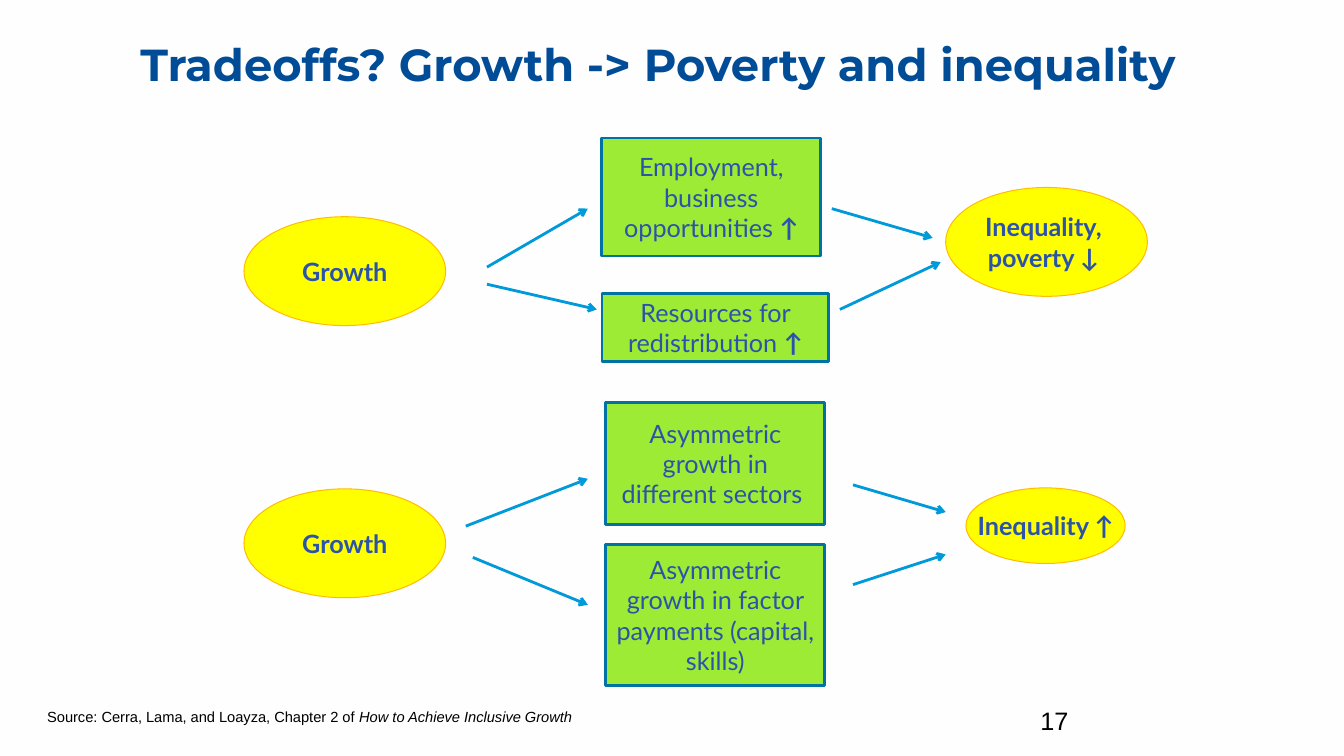
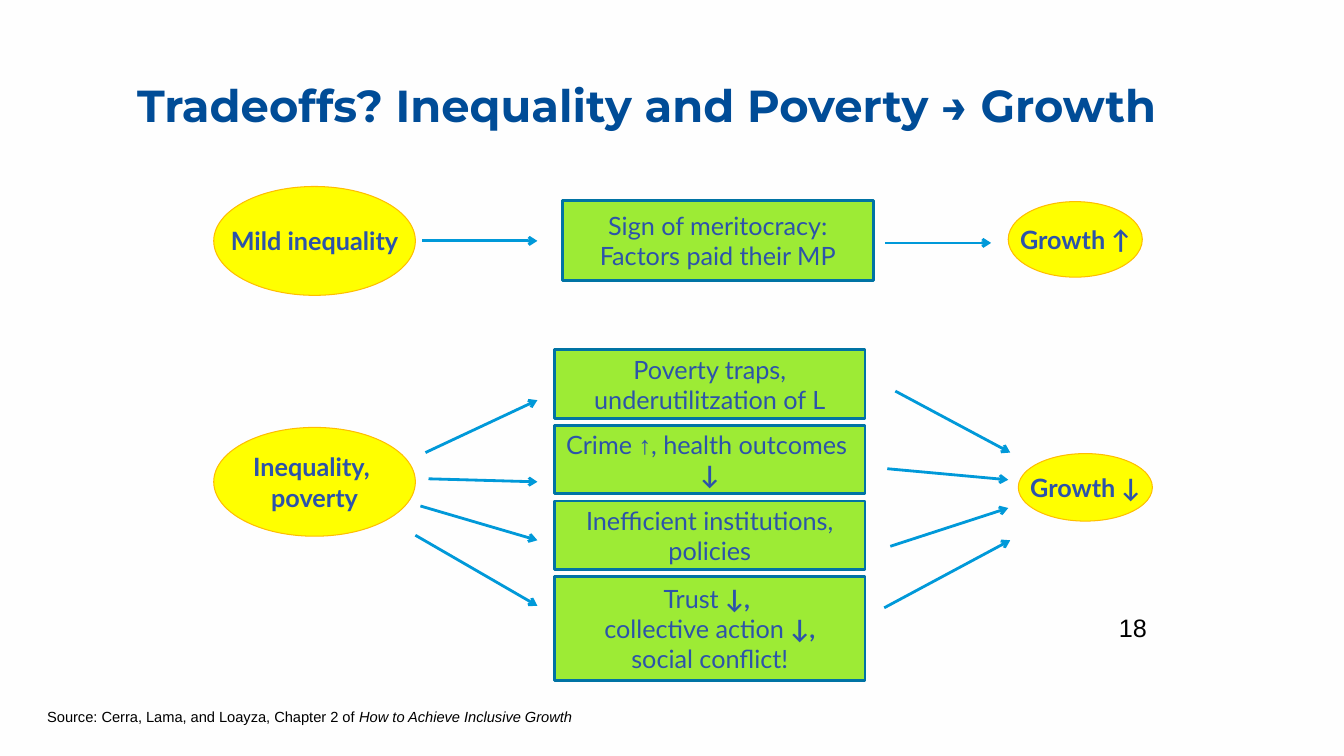
from dataclasses import dataclass

import pptx
import pptx.dml.color
import pptx.enum.shapes
import pptx.enum.text
import pptx.oxml
import pptx.util
from lxml import etree

Inches, Pt = pptx.util.Inches, pptx.util.Pt
SHAPE = pptx.enum.shapes.MSO_SHAPE
ALIGN = pptx.enum.text.PP_ALIGN
ANCHOR = pptx.enum.text.MSO_ANCHOR


@dataclass(frozen=True)
class Theme:
    background: str = "FEFEFE"
    title: str = "004C97"
    body: str = "2C53AA"
    plain: str = "000000"
    arrow: str = "0099D9"
    title_font: str = "Montserrat"
    body_font: str = "Lato"
    plain_font: str = "Arial"
    symbol_font: str = "Times New Roman"
    title_size: float = 32
    body_size: float = 18
    source_size: float = 10.5
    arrow_width: float = 2


T = Theme()
# kind: preset, fill, outline, outline width, bold text, wrapped text
NODE_STYLES = {
    "oval": (SHAPE.OVAL, "FFFF00", "FFBD00", 0.75, True, False),
    "box": (SHAPE.RECTANGLE, "9DEB35", "0073A4", 2, False, True),
}
BOLD = {"bold": True}
ITALIC = {"italic": True}
SYMBOL = {"font": T.symbol_font}
OVAL = (2, 1.08)
TALL_BOX = (2.17, 1.17)
TWO_LINES = 0.68  # height that holds two lines of body text
WIDE_BOX = (3.08, TWO_LINES)

# A text is a list of paragraphs; a paragraph is a list of runs,
# each a string or a (string, format) pair.
SOURCE = [["Source: Cerra, Lama, and Loayza, Chapter 2 of ",
           ("How to Achieve Inclusive Growth", ITALIC)]]

SLIDES = [
    {
        "title": "Tradeoffs? Growth -> Poverty and inequality",
        "title_at": (1.09, 0.32, 10.88, 0.64),
        "title_format": {"align": ALIGN.CENTER},
        "number": "17",
        "number_at": (10.22, 6.95, 3.11, 0.4),
        "nodes": [
            ("oval", (2.42, 2.15, *OVAL), [["Growth"]]),
            ("box", (5.97, 1.37, *TALL_BOX),
             [["Employment, business opportunities ", ("↑", BOLD)]]),
            ("box", (5.97, 2.91, 2.25, TWO_LINES),
             [["Resources for redistribution ", ("↑", BOLD)]]),
            ("oval", (9.38, 1.86, *OVAL), [["Inequality, "], ["poverty ↓ "]]),
            ("oval", (2.42, 4.85, *OVAL), [["Growth"]]),
            ("box", (6.01, 3.99, 2.17, 1.21),
             [["Asymmetric growth in different sectors "]]),
            ("box", (6.01, 5.4, 2.17, 1.4),
             [["Asymmetric growth in factor payments (capital, skills)"]]),
            ("oval", (9.58, 4.84, 1.58, 0.75), [["Inequality ↑"]]),
        ],
        "arrows": [
            (4.83, 2.65, 5.83, 2.07), (4.83, 2.82, 5.92, 3.07),
            (8.25, 2.07, 9.25, 2.36), (8.33, 3.07, 9.33, 2.6),
            (4.62, 5.22, 5.83, 4.75), (4.69, 5.53, 5.83, 6),
            (8.46, 4.81, 9.38, 5.08), (8.46, 5.8, 9.38, 5.5),
        ],
    },
    {
        "title": "Tradeoffs? Inequality and Poverty → Growth",
        "title_at": (1.36, 0.54, 10.92, 1.07),
        "title_format": {"anchor": ANCHOR.MIDDLE, "inset": (0, 0), "spacing": 0.9},
        "number": "18",
        "number_at": (11, 6.03, 2.33, 0.4),
        "nodes": [
            ("oval", (2.12, 1.85, *OVAL), [["Mild inequality"]]),
            ("box", (5.58, 1.99, 3.08, 0.79),
             [["Sign of meritocracy: Factors paid their MP"]]),
            ("oval", (10, 2, 1.33, 0.75), [["Growth ↑"]]),
            ("oval", (2.12, 4.24, *OVAL), [["Inequality, "], ["poverty"]]),
            ("box", (5.5, 3.47, *WIDE_BOX),
             [["Poverty traps,"], ["underutilitzation of L"]]),
            ("box", (5.5, 4.22, *WIDE_BOX),
             [["Crime ", ("↑", SYMBOL), ", health outcomes ", (" ↓", BOLD)]]),
            ("box", (5.5, 4.97, *WIDE_BOX),
             [["Inefficient institutions, policies"]]),
            ("box", (5.5, 5.72, 3.08, 1.03),
             [["Trust ", ("↓, ", BOLD)],
              ["collective action ", ("↓,", BOLD)],
              ["social conflict!"]]),
            ("oval", (10.1, 4.5, 1.33, 0.67), [["Growth ↓"]]),
        ],
        "arrows": [
            (4.19, 2.39, 5.33, 2.39), (8.78, 2.41, 9.83, 2.41),
            (4.22, 4.49, 5.33, 3.97), (4.25, 4.75, 5.33, 4.78),
            (4.17, 5.02, 5.33, 5.36), (4.12, 5.31, 5.33, 6.01),
            (8.88, 3.88, 10.02, 4.49), (8.8, 4.65, 10, 4.76),
            (8.83, 5.42, 10, 5.04), (8.77, 6.03, 10.02, 5.36),
        ],
    },
]


def rgb(value):
    return pptx.dml.color.RGBColor.from_string(value)


def inches(values):
    return [Inches(v) for v in values]


def write(sp, text, *, font=T.plain_font, size=T.body_size, color=T.plain,
          bold=False, align=ALIGN.LEFT, anchor=ANCHOR.TOP, wrap=True,
          inset=(0.1, 0.05), spacing=None):
    """Fill a shape with paragraphs of runs; a run's own format wins.

    inset holds the side margin and the top and bottom margin.
    """
    tf = sp.text_frame
    tf.word_wrap = wrap
    tf.vertical_anchor = anchor
    tf.margin_left = tf.margin_right = Inches(inset[0])
    tf.margin_top = tf.margin_bottom = Inches(inset[1])
    for i, runs in enumerate(text):
        p = tf.add_paragraph() if i else tf.paragraphs[0]
        p.alignment = align
        if spacing:
            p.line_spacing = spacing
        for run in runs:
            words, own = (run, {}) if isinstance(run, str) else run
            r = p.add_run()
            r.text = words
            r.font.name = own.get("font", font)
            r.font.size = Pt(size)
            r.font.bold = own.get("bold", bold)
            r.font.italic = own.get("italic", False)
            r.font.color.rgb = rgb(color)


def add_text(s, at, text, **fmt):
    write(s.shapes.add_textbox(*inches(at)), text, **fmt)


def add_node(s, kind, at, text):
    preset, fill, outline, width, bold, wrap = NODE_STYLES[kind]
    sp = s.shapes.add_shape(preset, *inches(at))
    sp.shadow.inherit = False
    sp.fill.solid()
    sp.fill.fore_color.rgb = rgb(fill)
    sp.line.color.rgb = rgb(outline)
    sp.line.width = Pt(width)
    write(sp, text, font=T.body_font, color=T.body, bold=bold, wrap=wrap,
          align=ALIGN.CENTER, anchor=ANCHOR.MIDDLE, inset=(0.1, 0))


def add_arrow(s, ends):
    line = s.shapes.add_connector(pptx.enum.shapes.MSO_CONNECTOR.STRAIGHT, *inches(ends))
    line.line.color.rgb = rgb(T.arrow)
    line.line.width = Pt(T.arrow_width)
    qn = pptx.oxml.ns.qn
    props = line._element.spPr
    etree.SubElement(props.find(qn("a:ln")), qn("a:tailEnd"), type="arrow")
    etree.SubElement(props, qn("a:effectLst"))


def add_slide(prs, content):
    s = prs.slides.add_slide(prs.slide_layouts[6])
    add_text(s, content["title_at"], [[content["title"]]], font=T.title_font,
             size=T.title_size, color=T.title, bold=True, **content["title_format"])
    for node in content["nodes"]:
        add_node(s, *node)
    for ends in content["arrows"]:
        add_arrow(s, ends)
    add_text(s, content["number_at"], [[content["number"]]])
    add_text(s, (0.37, 6.97, 5.84, 0.28), SOURCE, size=T.source_size)


def main():
    prs = pptx.Presentation()
    prs.slide_width, prs.slide_height = Inches(13.33), Inches(7.5)
    background = prs.slide_master.background.fill
    background.solid()
    background.fore_color.rgb = rgb(T.background)
    for content in SLIDES:
        add_slide(prs, content)
    prs.save("out.pptx")


if __name__ == "__main__":
    main()
